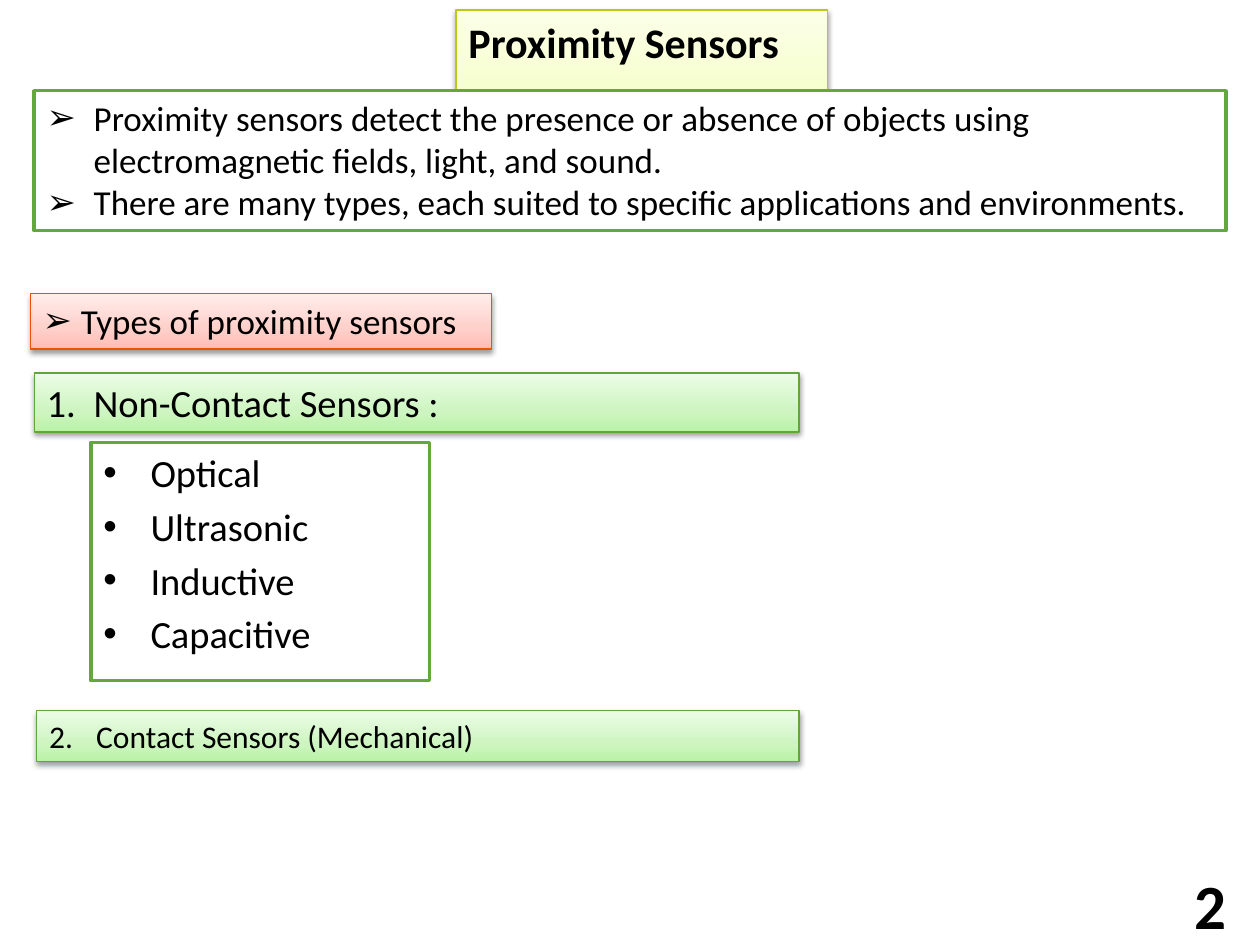
from dataclasses import dataclass

from lxml.etree import SubElement
from pptx import Presentation
from pptx.dml.color import RGBColor
from pptx.enum.shapes import MSO_SHAPE
from pptx.enum.text import MSO_ANCHOR, MSO_AUTO_SIZE, PP_ALIGN
from pptx.oxml.ns import qn
from pptx.util import Cm, Pt


@dataclass(frozen=True)
class Theme:
    font: str = "Calibri"
    ink: str = "000000"
    paper: str = "FFFFFF"
    frame: str = "64A73B"
    lime: tuple = ("F0FFA5", "F4FFBF", "FBFFE7", "B8CA15")
    coral: tuple = ("FFBCB3", "FFCFC9", "FFEDEB", "EB5300")
    green: tuple = ("B9F2A6", "CEF5C1", "ECFCE7", "61A637")
    stops: tuple = (0, 35, 100)
    number_size: int = 36
    title_size: int = 24
    text_size: int = 20
    list_size: int = 22
    small_size: int = 18
    thin: float = 0.75
    thick: float = 2


THEME = Theme()
HANG = 0.95

TITLE = "Proximity Sensors"
INTRO = [
    "Proximity sensors detect the presence or absence of objects using "
    "electromagnetic fields, light, and sound.",
    "There are many types, each suited to specific applications and environments.",
]
NON_CONTACT = ["Optical", "Ultrasonic", "Inductive", "Capacitive"]
BANNERS = [
    ("Types of proximity sensors", (0.61, 5.92, 9.3, 1.12), THEME.coral,
     dict(size=THEME.text_size, bullet="➢", hang=0.77)),
    ("Non-Contact Sensors :", (0.69, 7.52, 15.42, 1.19), THEME.green,
     dict(size=THEME.list_size, number=1)),
    ("Contact Sensors (Mechanical)", (0.74, 14.33, 15.37, 1.02), THEME.green,
     dict(size=THEME.small_size, number=2)),
]


def color(value):
    return RGBColor.from_string(value)


def place(box, area):
    box.left, box.top, box.width, box.height = map(Cm, area)


def add_rectangle(page, area):
    box = page.shapes.add_shape(MSO_SHAPE.RECTANGLE, *map(Cm, area))
    box.shadow.inherit = False
    return box


def set_line(box, value, width):
    box.line.color.rgb = color(value)
    box.line.width = Pt(width)


def add_color(parent, value):
    return SubElement(parent, qn("a:srgbClr"), val=value)


def style_banner(box, palette):
    *shades, edge = palette
    box.shadow.inherit = False
    box.fill.background()
    properties = box.fill._xPr
    properties.remove(properties.find(qn("a:noFill")))
    effects = properties.find(qn("a:effectLst"))
    gradient = SubElement(properties, qn("a:gradFill"), rotWithShape="1")
    effects.addprevious(gradient)
    stop_list = SubElement(gradient, qn("a:gsLst"))
    for position, shade in zip(THEME.stops, shades):
        add_color(SubElement(stop_list, qn("a:gs"), pos=str(position * 1000)), shade)
    SubElement(gradient, qn("a:lin"), ang=str(270 * 60000), scaled="0")
    shadow = SubElement(effects, qn("a:outerShdw"), blurRad="40000", dist="20000",
                        dir=str(90 * 60000), rotWithShape="0")
    SubElement(add_color(shadow, THEME.ink), qn("a:alpha"), val="38000")
    set_line(box, edge, THEME.thin)


def add_marker(para, bullet, number, hang):
    properties = para._p.get_or_add_pPr()
    properties.set("marL", str(Cm(hang)))
    properties.set("indent", str(-Cm(hang)))
    if number:
        SubElement(properties, qn("a:buFont"), typeface="+mj-lt")
        SubElement(properties, qn("a:buAutoNum"), type="arabicPeriod", startAt=str(number))
    else:
        SubElement(properties, qn("a:buFont"), typeface="Arial")
        SubElement(properties, qn("a:buChar"), char=bullet)


def write(box, lines, *, size, bold=False, align=PP_ALIGN.LEFT, anchor=MSO_ANCHOR.TOP,
          bullet=None, number=None, hang=HANG, gap=0, fit=MSO_AUTO_SIZE.SHAPE_TO_FIT_TEXT):
    frame = box.text_frame
    frame.word_wrap = True
    frame.auto_size = fit
    frame.vertical_anchor = anchor
    for index, line in enumerate(lines):
        para = frame.add_paragraph() if index else frame.paragraphs[0]
        para.alignment = align
        para.space_before = Pt(gap if index else 0)
        if bullet or number:
            add_marker(para, bullet, number, hang)
        span = para.add_run()
        span.text = line
        span.font.name = THEME.font
        span.font.size = Pt(size)
        span.font.bold = bold
        span.font.color.rgb = color(THEME.ink)


def main():
    deck = Presentation()
    deck.slide_width, deck.slide_height = Cm(25.4), Cm(19.05)
    page = deck.slides.add_slide(deck.slide_layouts[1])
    title, body = page.placeholders

    number = page.shapes.add_textbox(*map(Cm, (22.91, 17.73, 2.06, 1.02)))
    write(number, ["2"], size=THEME.number_size, bold=True, align=PP_ALIGN.RIGHT,
          anchor=MSO_ANCHOR.MIDDLE, fit=MSO_AUTO_SIZE.NONE)

    place(title, (9.19, 0.2, 7.49, 1.28))
    style_banner(title, THEME.lime)
    write(title, [TITLE], size=THEME.title_size, bold=True)

    intro = add_rectangle(page, (0.69, 1.83, 24.03, 2.82))
    intro.fill.solid()
    intro.fill.fore_color.rgb = color(THEME.paper)
    set_line(intro, THEME.frame, THEME.thick)
    write(intro, INTRO, size=THEME.text_size, bullet="➢")

    for text, area, palette, text_format in BANNERS:
        banner = add_rectangle(page, area)
        style_banner(banner, palette)
        write(banner, [text], **text_format)

    place(body, (1.83, 8.92, 6.83, 4.8))
    set_line(body, THEME.frame, THEME.thick)
    write(body, NON_CONTACT, size=THEME.list_size, bullet="•",
          gap=THEME.list_size * 0.2, fit=MSO_AUTO_SIZE.NONE)

    deck.save("out.pptx")


if __name__ == "__main__":
    main()
